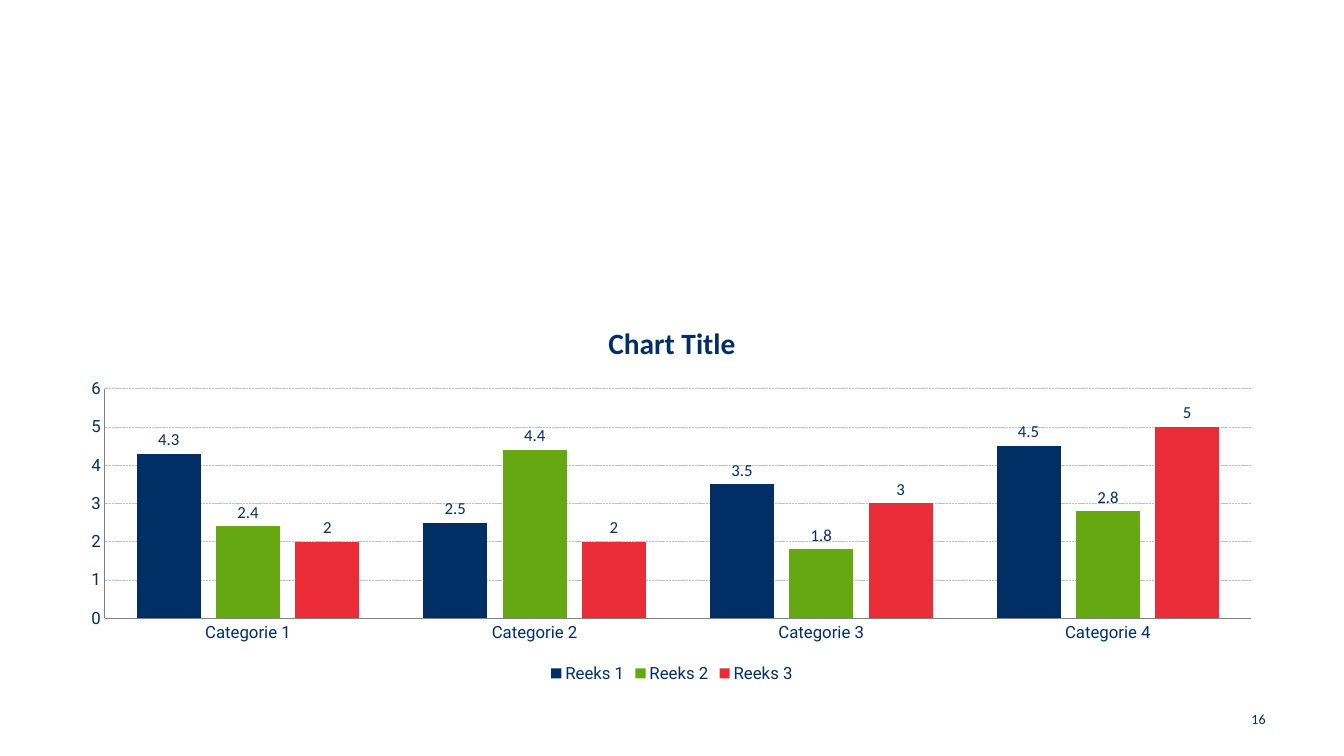
from lxml import etree
from pptx import Presentation
from pptx.chart.data import CategoryChartData
from pptx.dml.color import RGBColor
from pptx.enum import chart as ch, dml, text
from pptx.oxml import parse_xml
from pptx.oxml.ns import nsdecls
from pptx.util import Inches, Pt

WIDTH, HEIGHT = Inches(13.33), Inches(7.5)
LEFT, RIGHT = Inches(0.68), Inches(12.65)
COLORS = {"navy": "002E65", "green": "65A812", "red": "EA2C38",
          "axis": "808080", "grid": "BFBFBF"}
CATEGORIES = [f"Categorie {n}" for n in range(1, 5)]
SERIES = {
    "Reeks 1": ("navy", (4.3, 2.5, 3.5, 4.5)),
    "Reeks 2": ("green", (2.4, 4.4, 1.8, 2.8)),
    "Reeks 3": ("red", (2, 2, 3, 5)),
}
# Inner plot area as shares of the chart frame
PLOT_SHARES = {"x": 0.03, "y": 0.22, "w": 0.95, "h": 0.6}


def color(key):
    return RGBColor.from_string(COLORS[key])


def style_font(font, name, size, bold=False):
    font.name, font.size, font.bold = name, Pt(size), bold
    font.color.rgb = color("navy")


def style_line(line, key):
    line.color.rgb = color(key)
    line.width = Pt(0.5)


def place_plot(chart):
    layout = parse_xml(
        f'<c:layout {nsdecls("c")}><c:manualLayout><c:layoutTarget val="inner"/>'
        '<c:xMode val="edge"/><c:yMode val="edge"/></c:manualLayout></c:layout>')
    for side, share in PLOT_SHARES.items():
        etree.SubElement(layout[0], layout.tag.replace("layout", side)).set("val", str(share))
    plot_area = chart.plots[0]._element.getparent()
    for old in plot_area.xpath("c:layout"):
        plot_area.remove(old)
    plot_area.insert(0, layout)


def style_axis(axis):
    axis.major_tick_mark = axis.minor_tick_mark = ch.XL_TICK_MARK.NONE
    style_font(axis.tick_labels.font, "Roboto", 12)
    style_line(axis.format.line, "axis")


def add_column_chart(slide, title, top, height):
    data = CategoryChartData()
    data.categories = CATEGORIES
    for name, (_, values) in SERIES.items():
        data.add_series(name, values)
    chart = slide.shapes.add_chart(ch.XL_CHART_TYPE.COLUMN_CLUSTERED, LEFT, top,
                                   RIGHT - LEFT, height, data).chart
    style_font(chart.font, "Roboto", 10)

    # Title and legend
    heading = chart.chart_title.text_frame
    heading.text = title
    style_font(heading.paragraphs[0].font, "Calibri", 21, bold=True)
    chart.has_legend = True
    chart.legend.position = ch.XL_LEGEND_POSITION.BOTTOM
    chart.legend.include_in_layout = False
    style_font(chart.legend.font, "Roboto", 12)

    # Axes and gridlines
    style_axis(chart.category_axis)
    scale = chart.value_axis
    style_axis(scale)
    scale.minimum_scale, scale.maximum_scale, scale.major_unit = 0, 6, 1
    scale.tick_labels.number_format = "General"
    scale.tick_labels.number_format_is_linked = False
    grid = scale.major_gridlines.format.line
    style_line(grid, "grid")
    grid.dash_style = dml.MSO_LINE.SQUARE_DOT

    # Columns and their values
    columns = chart.plots[0]
    columns.gap_width, columns.overlap = 100, -24
    columns.vary_by_categories = False
    for series, (key, _) in zip(columns.series, SERIES.values()):
        series.format.fill.solid()
        series.format.fill.fore_color.rgb = color(key)
        series.invert_if_negative = False
        labels = series.data_labels
        labels.show_value = True
        labels.position = ch.XL_LABEL_POSITION.OUTSIDE_END
        style_font(labels.font, "Calibri", 12)
    place_plot(chart)


def add_page_number(slide, number, top, width, height):
    frame = slide.shapes.add_textbox(RIGHT - width, top, width, height).text_frame
    frame.word_wrap = True
    frame.vertical_anchor = text.MSO_ANCHOR.MIDDLE
    line = frame.paragraphs[0]
    line.text = number
    line.alignment = text.PP_ALIGN.RIGHT
    style_font(line.font, "Calibri", 10)


def main():
    deck = Presentation()
    deck.slide_width, deck.slide_height = WIDTH, HEIGHT
    slide = deck.slides.add_slide(deck.slide_layouts[6])
    add_page_number(slide, "16", Inches(6.93), Inches(2.89), Inches(0.4))
    add_column_chart(slide, "Chart Title", Inches(3.02), Inches(3.8))
    deck.save("out.pptx")


if __name__ == "__main__":
    main()
